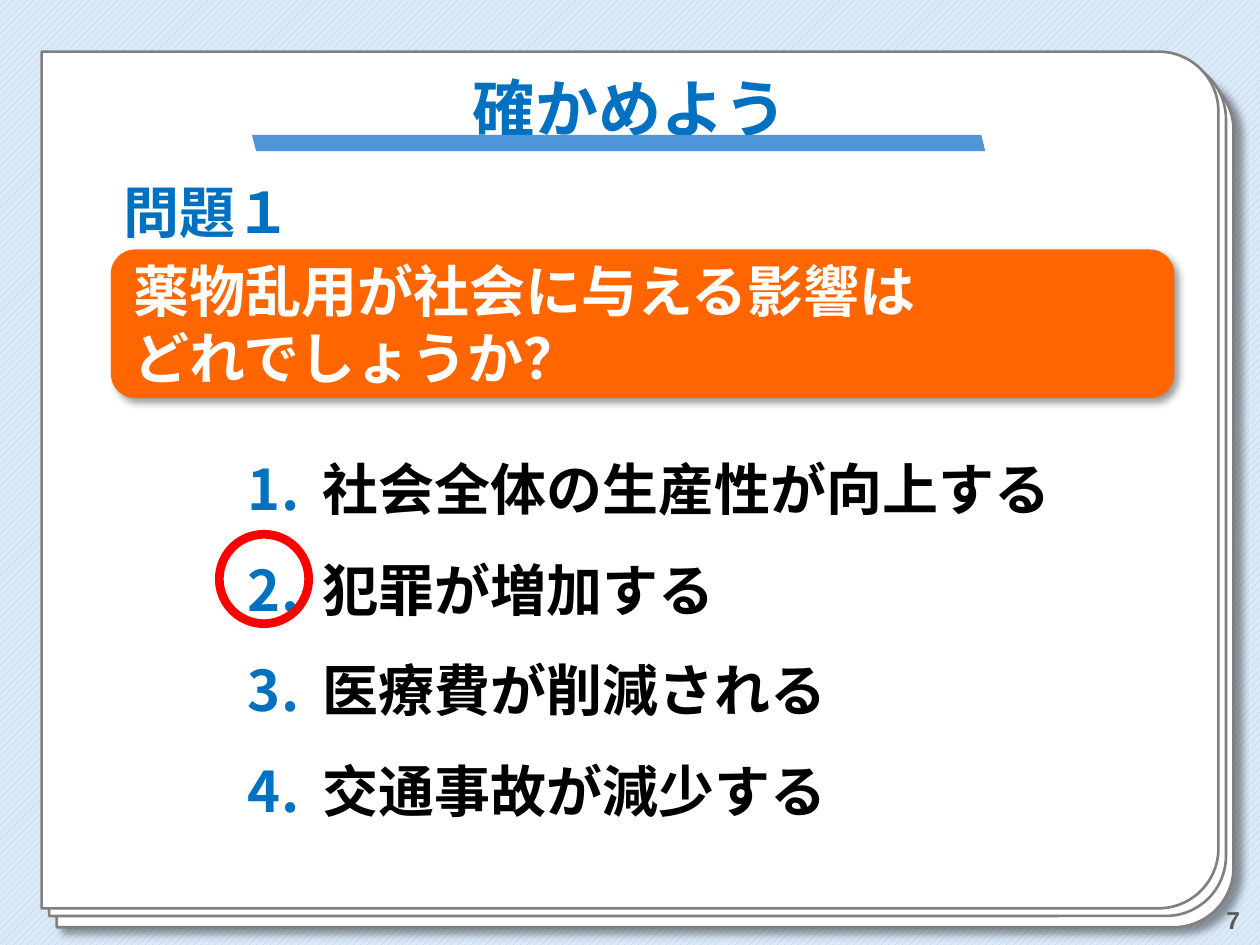
import pptx
import pptx.util
import pptx.oxml
import pptx.oxml.ns
import pptx.dml.color
import pptx.enum.dml
import pptx.enum.shapes
import pptx.enum.text
from lxml import etree

Inches, Pt = pptx.util.Inches, pptx.util.Pt
qn = pptx.oxml.ns.qn
SHAPE = pptx.enum.shapes.MSO_SHAPE
ALIGN = pptx.enum.text.PP_ALIGN
ANCHOR = pptx.enum.text.MSO_ANCHOR
JP = "Noto Sans CJK JP"

TITLE = "確かめよう"
HEADING = "問題１"
QUESTION = "薬物乱用が社会に与える影響は\vどれでしょうか？"
ANSWERS = [
    "社会全体の生産性が向上する",
    "犯罪が増加する",
    "医療費が削減される",
    "交通事故が減少する",
]
PAGE_NUMBER = "7"
PAGES = [(1.72, -0.71), (1.66, -0.8), (1.6, -0.86)]
COLORS = {
    "stripe": "A6CAEC", "back": "DCEAF7", "white": "FFFFFF", "edge": "808080",
    "blue": "0070C0", "bar": "4E95D9", "orange": "FF6600", "red": "FF0000",
    "black": "000000", "number": "595959",
}


def color(name):
    return pptx.dml.color.RGBColor.from_string(COLORS[name])


def add_shape(s, kind, box, fill=None, line=None, width=1.5):
    sp = s.shapes.add_shape(kind, *map(Inches, box))
    sp.shadow.inherit = False
    if fill:
        sp.fill.solid()
        sp.fill.fore_color.rgb = color(fill)
    else:
        sp.fill.background()
    if line:
        sp.line.color.rgb = color(line)
        sp.line.width = Pt(width)
    else:
        sp.line.fill.background()
    return sp


def add_shadow(sp, distance):
    effects = sp.element.spPr.find(qn("a:effectLst"))
    outer = etree.SubElement(effects, qn("a:outerShdw"), blurRad=str(Pt(4)),
                             dist=str(Pt(distance)), dir="2700000",
                             algn="tl", rotWithShape="0")
    rgb = etree.SubElement(outer, qn("a:srgbClr"), val=COLORS["black"])
    etree.SubElement(rgb, qn("a:alpha"), val="40000")


def number_paragraph(p):
    pPr = p._p.get_or_add_pPr()
    pPr.set("marL", str(Inches(1.57)))
    pPr.set("indent", str(Inches(-0.59)))
    bullet_color = etree.SubElement(pPr, qn("a:buClr"))
    etree.SubElement(bullet_color, qn("a:srgbClr"), val=COLORS["blue"])
    etree.SubElement(pPr, qn("a:buFont"), typeface=JP)
    etree.SubElement(pPr, qn("a:buAutoNum"), type="arabicPeriod")


def write(sp, lines, size, ink, insets=(0.1, 0.05, 0.1, 0.05), font="Arial",
          anchor=ANCHOR.TOP, wrap=True, numbered=False, **layout):
    tf = sp.text_frame
    sides = ("margin_left", "margin_top", "margin_right", "margin_bottom")
    frame = dict(zip(sides, map(Inches, insets)), vertical_anchor=anchor,
                 word_wrap=wrap, auto_size=pptx.enum.text.MSO_AUTO_SIZE.NONE)
    for key, value in frame.items():
        setattr(tf, key, value)
    for i, line in enumerate(lines):
        p = tf.add_paragraph() if i else tf.paragraphs[0]
        p.text = line
        for key, value in {"alignment": ALIGN.LEFT, **layout}.items():
            setattr(p, key, value)
        if numbered:
            number_paragraph(p)
        for r in p.runs:
            for key, value in {"size": Pt(size), "name": font, "bold": True}.items():
                setattr(r.font, key, value)
            r.font.color.rgb = color(ink)
            etree.SubElement(r.font._element, qn("a:ea"), typeface=JP)


def add_text(s, box, *args, **layout):
    sp = s.shapes.add_textbox(*map(Inches, box))
    write(sp, *args, **layout)


def main():
    prs = pptx.Presentation()
    prs.slide_width, prs.slide_height = Inches(10), Inches(7.5)
    s = prs.slides.add_slide(prs.slide_layouts[5])
    back = s.background.fill
    back.patterned()
    back.pattern = pptx.enum.dml.MSO_PATTERN.WIDE_UPWARD_DIAGONAL
    back.fore_color.rgb = color("stripe")
    back.back_color.rgb = color("back")

    title = s.shapes.title
    for i, (left, top) in enumerate(PAGES):
        page = add_shape(s, SHAPE.ROUND_2_SAME_RECTANGLE,
                         (left, top, 6.8, 9.34), "white", "edge")
        page.rotation = 90
        page.adjustments[0] = 0.07
        page.adjustments[1] = 0
        if i == 0:
            add_shadow(page, 5)
        title.element.addprevious(page.element)

    place = dict(left=0.68, top=0.35, width=8.64, height=1.08)
    for key, value in place.items():
        setattr(title, key, Inches(value))
    write(title, [TITLE], 36, "blue", anchor=ANCHOR.MIDDLE,
          alignment=ALIGN.CENTER, line_spacing=0.9)

    add_text(s, (7.69, 7.1, 2.25, 0.4), [PAGE_NUMBER], 14, "number",
             anchor=ANCHOR.MIDDLE, alignment=ALIGN.RIGHT)
    add_text(s, (0.89, 3.18, 8.44, 3.36), ANSWERS, 32, "black",
             insets=(0.1, 0.16, 0.1, 0.05), numbered=True, line_spacing=1.5)

    question = add_shape(s, SHAPE.ROUNDED_RECTANGLE, (0.88, 1.98, 8.44, 1.18), "orange")
    question.adjustments[0] = 0.165
    add_shadow(question, 3)
    write(question, [QUESTION], 32, "white", insets=(0.12, 0, 0.12, 0))

    add_text(s, (0.88, 1.41, 1.55, 0.59), [HEADING], 32, "blue", font=JP,
             anchor=ANCHOR.BOTTOM, wrap=False, line_spacing=0.9, space_after=Pt(30))

    bar = add_shape(s, SHAPE.PARALLELOGRAM, (2, 1.07, 5.82, 0.13), "bar")
    bar.element.spPr.find(qn("a:xfrm")).set("flipH", "1")
    add_shape(s, SHAPE.OVAL, (1.74, 4.24, 0.71, 0.71), line="red", width=5)

    prs.save("out.pptx")


if __name__ == "__main__":
    main()
